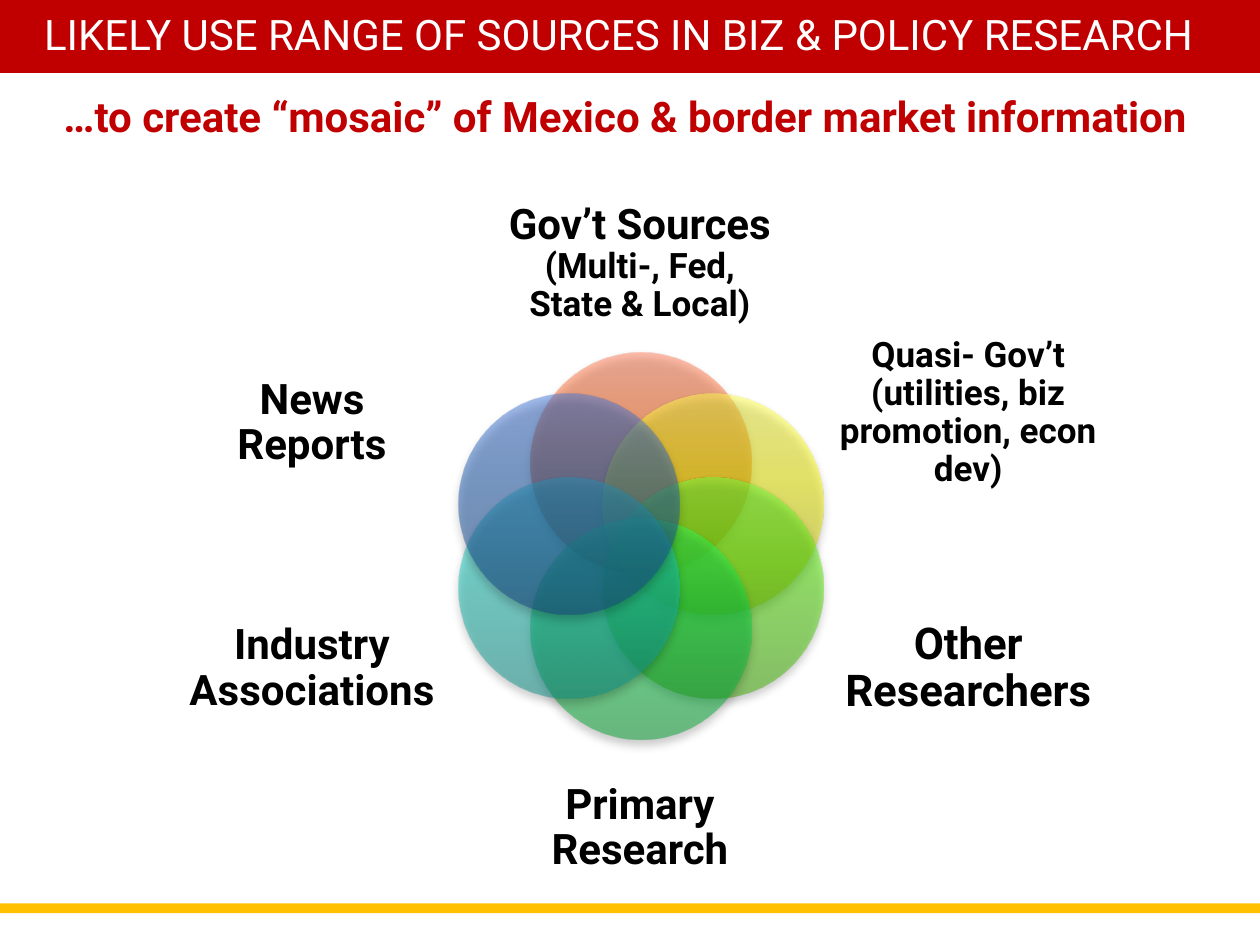
import math

from lxml import etree
from pptx import Presentation
from pptx import util as u
from pptx.dml.color import RGBColor
from pptx.enum import shapes, text
from pptx.oxml.ns import qn

FONT = "Roboto"
RED, GOLD, WHITE, BLACK = "C00000", "FFC000", "FFFFFF", "000000"
PAGE_WIDTH, PAGE_HEIGHT = 25.4, 19.05

TITLE = "LIKELY USE RANGE OF SOURCES IN BIZ & POLICY RESEARCH"
SUBTITLE = "…to create “mosaic” of Mexico & border market information "

# Clockwise from the top: gradient colours, label spans (text, size), label box in cm
SOURCES = [
    (("B94100", "FF5A01", "FF7D59"),
     [("Gov’t Sources ", 24), ("(Multi-, Fed, State & Local)", 20)],
     (10.13, 3.81, 5.54, 3.02)),
    (("B2B200", "F7F600", "FFFE4F"),
     [("Quasi- Gov’t (utilities, biz promotion, econ dev)", 20)],
     (16.89, 6.68, 5.26, 3.3)),
    (("3DAC00", "55ED00", "6FFF42"),
     [("Other Researchers", 25)], (16.89, 11.63, 5.26, 3.71)),
    (("04A131", "09DB45", "36FF5C"),
     [("Primary Research", 24)], (10.13, 15.19, 5.54, 3.02)),
    (("0D9189", "15C6BA", "39F1E1"),
     [("Industry Associations", 24)], (3.66, 11.63, 5.26, 3.71)),
    (("154382", "1F5DB2", "4578DB"),
     [("News Reports", 24)], (3.66, 6.68, 5.26, 3.71)),
]
CENTRE_X, CENTRE_Y, ORBIT, DIAMETER = 12.92, 11.01, 1.68, 4.45


def color(value):
    return RGBColor.from_string(value)


def place(left, top, width, height):
    return [u.Cm(value) for value in (left, top, width, height)]


def add_text(page, spans, bounds, fill=BLACK, bold=True, align=text.PP_ALIGN.CENTER,
             anchor=text.MSO_ANCHOR.TOP, inset=None, spacing=None, hanging=None):
    frame = page.shapes.add_textbox(*place(*bounds)).text_frame
    frame.word_wrap = True
    frame.vertical_anchor = anchor
    if inset is not None:
        frame.margin_left = frame.margin_right = u.Cm(inset)
        frame.margin_top = frame.margin_bottom = u.Cm(inset)
    para = frame.paragraphs[0]
    para.alignment = align
    if spacing:
        para.line_spacing = spacing
    if hanging:
        properties = para._p.get_or_add_pPr()
        properties.set("marL", str(u.Cm(hanging)))
        properties.set("indent", str(-u.Cm(hanging)))
    for words, size in spans:
        span = para.add_run()
        span.text = words
        span.font.name = FONT
        span.font.size = u.Pt(size)
        span.font.bold = bold
        span.font.color.rgb = color(fill)


def add_shape(page, kind, bounds):
    shape = page.shapes.add_shape(kind, *place(*bounds))
    shape.shadow.inherit = False
    shape.line.fill.background()
    return shape


def add_band(page, top, height, fill):
    band = add_shape(page, shapes.MSO_SHAPE.RECTANGLE, (0, top, PAGE_WIDTH, height))
    band.fill.solid()
    band.fill.fore_color.rgb = color(fill)


def add_element(parent, tag, **attributes):
    return etree.SubElement(parent, qn(tag),
                            {name: str(value) for name, value in attributes.items()})


def add_tint(parent, value, percent):
    tint = add_element(parent, "a:srgbClr", val=value)
    add_element(tint, "a:alpha", val=percent * 1000)


def add_petal(page, bounds, colors):
    petal = add_shape(page, shapes.MSO_SHAPE.OVAL, bounds)
    petal.fill.background()
    properties = petal._element.spPr
    empty_fill = properties.find(qn("a:noFill"))

    # Half-transparent gradient rising from the bottom
    gradient = etree.Element(qn("a:gradFill"), rotWithShape="1")
    stops = add_element(gradient, "a:gsLst")
    for position, value in zip((0, 60, 100), colors):
        add_tint(add_element(stops, "a:gs", pos=position * 1000), value, 50)
    add_element(gradient, "a:lin", ang=270 * 60000, scaled=0)
    properties.replace(empty_fill, gradient)

    # Soft shadow below
    shadow = add_element(properties.find(qn("a:effectLst")), "a:outerShdw",
                         blurRad=u.Pt(5.2), dist=u.Pt(3), dir=90 * 60000,
                         rotWithShape=0)
    add_tint(shadow, BLACK, 40)


def main():
    deck = Presentation()
    deck.slide_width, deck.slide_height = u.Cm(PAGE_WIDTH), u.Cm(PAGE_HEIGHT)
    page = deck.slides.add_slide(deck.slide_layouts[6])

    # Header and footer bands
    add_band(page, 0, 1.47, RED)
    add_band(page, 18.21, 0.2, GOLD)
    add_text(page, [(TITLE, 24)], (0.64, 0.05, 24.76, 1.42), fill=WHITE,
             bold=False, align=text.PP_ALIGN.LEFT)

    # Ring of overlapping circles with their labels
    for index, (colors, spans, label_bounds) in enumerate(SOURCES):
        angle = math.radians(index * 360 / len(SOURCES) - 90)
        left = CENTRE_X + ORBIT * math.cos(angle) - DIAMETER / 2
        top = CENTRE_Y + ORBIT * math.sin(angle) - DIAMETER / 2
        add_petal(page, (left, top, DIAMETER, DIAMETER), colors)
        add_text(page, spans, label_bounds, anchor=text.MSO_ANCHOR.MIDDLE,
                 inset=0, spacing=0.9)

    # Subtitle
    add_text(page, [(SUBTITLE, 24)], (0.43, 1.7, 24.56, 1.27), fill=RED, hanging=0.64)

    deck.save("out.pptx")


if __name__ == "__main__":
    main()
